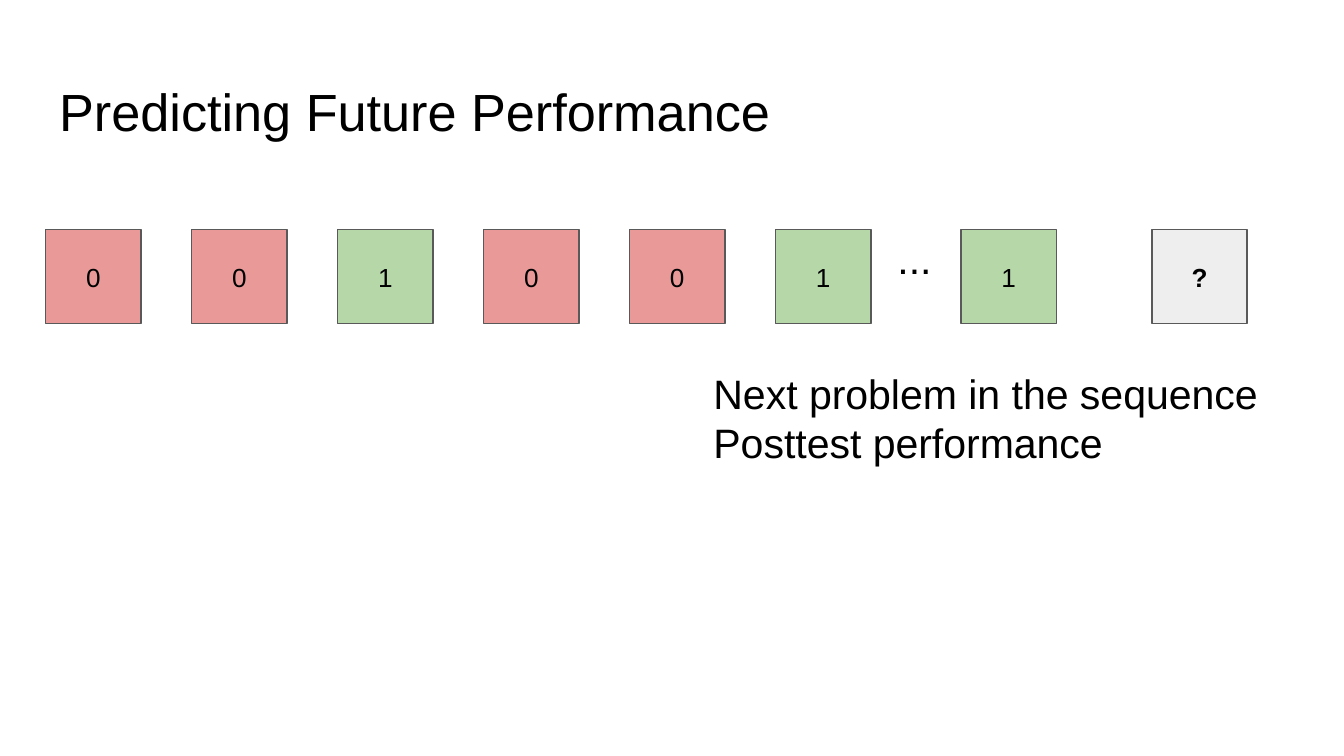
import pptx
import pptx.dml.color
import pptx.enum.shapes
import pptx.enum.text
import pptx.util

Inches = pptx.util.Inches
ALIGN = pptx.enum.text.PP_ALIGN
ANCHOR = pptx.enum.text.MSO_ANCHOR
RED, GREEN, GREY = "EA9999", "B6D7A8", "EEEEEE"


def color(value):
    return pptx.dml.color.RGBColor.from_string(value)


def write(box, lines, size, align=ALIGN.LEFT, anchor=ANCHOR.TOP, bold=False):
    frame = box.text_frame
    frame_format = {
        "word_wrap": True,
        "auto_size": pptx.enum.text.MSO_AUTO_SIZE.NONE,
        "vertical_anchor": anchor,
    }
    for side in ("left", "top", "right", "bottom"):
        frame_format["margin_" + side] = Inches(0.1)
    for name, value in frame_format.items():
        setattr(frame, name, value)
    para_format = {"alignment": align, "line_spacing": 1.0, "space_before": pptx.util.Pt(0)}
    font_format = {"name": "Arial", "size": pptx.util.Pt(size), "bold": bold}
    for index, line in enumerate(lines):
        para = frame.add_paragraph() if index else frame.paragraphs[0]
        for name, value in para_format.items():
            setattr(para, name, value)
        span = para.add_run()
        span.text = line
        for name, value in font_format.items():
            setattr(span.font, name, value)
        span.font.color.rgb = color("000000")


# Widescreen page, 16:9
deck = pptx.Presentation()
deck.slide_width = Inches(10)
deck.slide_height = Inches(10 * 9 / 16)
page = deck.slides.add_slide(deck.slide_layouts[5])

# Title
title = page.shapes.title
title.left, title.top = Inches(0.34), Inches(0.49)
title.width, title.height = Inches(9.32), Inches(0.63)
write(title, ["Predicting Future Performance"], 28)

# Answer squares: six evenly spaced, then the latest answer and the unknown one
first_left, sixth_left = 0.34, 5.77
pitch = (sixth_left - first_left) / 5
lefts = [first_left + pitch * index for index in range(6)] + [7.15, 8.57]
fills = {"0": RED, "1": GREEN, "?": GREY}
for left, answer in zip(lefts, "0010011?"):
    square = page.shapes.add_shape(
        pptx.enum.shapes.MSO_SHAPE.RECTANGLE,
        Inches(left), Inches(1.71), Inches(0.71), Inches(0.7))
    square.shadow.inherit = False
    square.fill.solid()
    square.fill.fore_color.rgb = color(fills[answer])
    square.line.color.rgb = color("595959")
    square.line.width = pptx.util.Pt(0.75)
    write(square, [answer], 14, ALIGN.CENTER, ANCHOR.MIDDLE, answer == "?")

# Ellipsis between the answers
ellipsis = page.shapes.add_textbox(Inches(6.24), Inches(1.64), Inches(1.13), Inches(0.49))
write(ellipsis, ["..."], 22, ALIGN.CENTER)

# What is predicted
targets = page.shapes.add_textbox(Inches(5.21), Inches(2.64), Inches(4.28), Inches(0.49))
write(targets, ["Next problem in the sequence", "Posttest performance"], 22)

deck.save("out.pptx")
